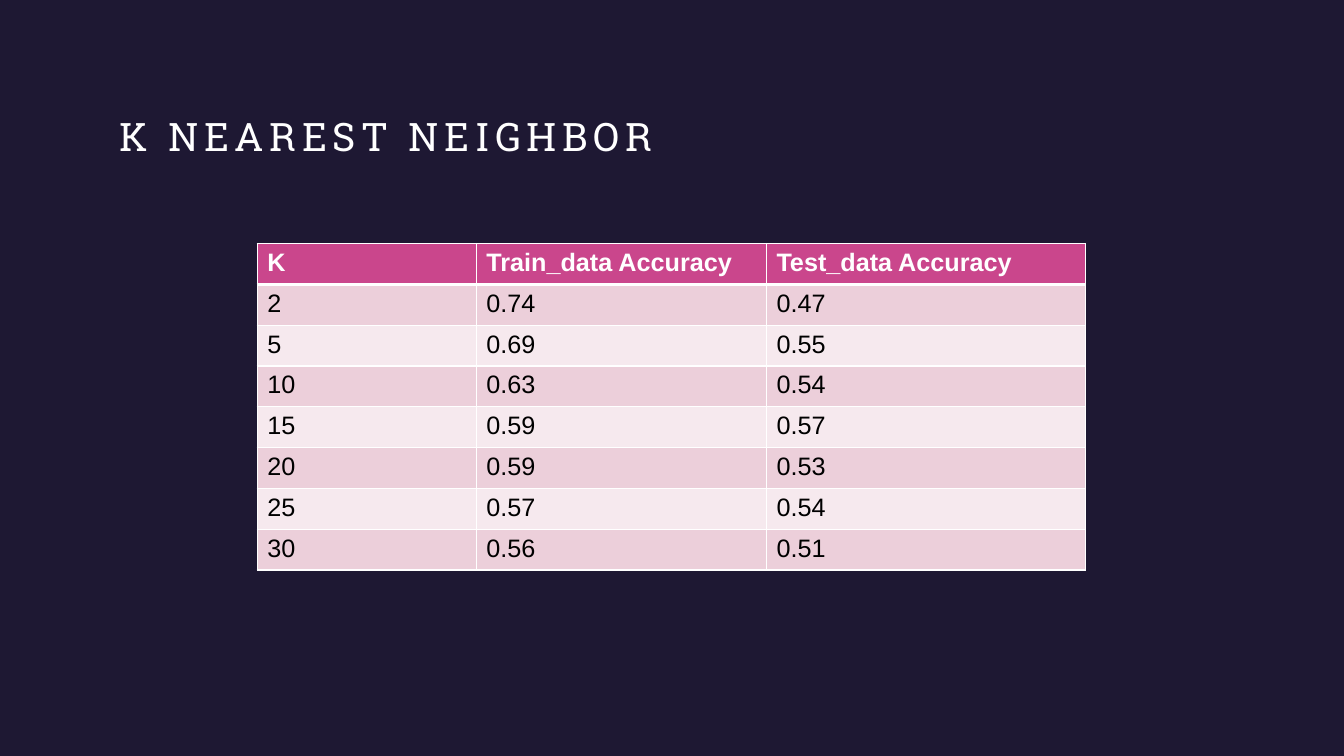
from lxml.etree import SubElement
from pptx import Presentation
from pptx.dml.color import RGBColor
from pptx.enum.text import MSO_ANCHOR
from pptx.oxml.ns import qn
from pptx.util import Pt

TITLE = "K NEAREST NEIGHBOR"
ROWS = [
    ("K", "Train_data Accuracy", "Test_data Accuracy"),
    ("2", "0.74", "0.47"),
    ("5", "0.69", "0.55"),
    ("10", "0.63", "0.54"),
    ("15", "0.59", "0.57"),
    ("20", "0.59", "0.53"),
    ("25", "0.57", "0.54"),
    ("30", "0.56", "0.51"),
]
COLUMN_WIDTHS = (156.5, 207.2, 228.2)
ROW_HEIGHT = 29.16
TABLE_LEFT, TABLE_TOP = 183.8, 174
COLORS = {
    "background": "1E1833",
    "white": "FFFFFF",
    "black": "000000",
    "header": "CA468C",
    "odd": "ECCFDA",
    "even": "F6E9EE",
}


def color(name):
    return RGBColor.from_string(COLORS[name])


def add_text(paragraph, text, font_name, size, color_name, bold=False):
    run = paragraph.add_run()
    run.text = text
    run.font.name = font_name
    run.font.size = Pt(size)
    run.font.bold = bold
    run.font.color.rgb = color(color_name)
    return run


def add_borders(cell, widths):
    properties = cell._tc.get_or_add_tcPr()
    for position, (side, width) in enumerate(widths.items()):
        line = properties.makeelement(qn(f"a:{side}"), {"w": str(Pt(width))})
        fill = SubElement(line, qn("a:solidFill"))
        SubElement(fill, qn("a:srgbClr"), val=COLORS["white"])
        properties.insert(position, line)


def add_title(slide):
    box = slide.shapes.add_textbox(Pt(85), Pt(80), Pt(790), Pt(52))
    frame = box.text_frame
    frame.word_wrap = True
    frame.vertical_anchor = MSO_ANCHOR.TOP
    frame.margin_left = frame.margin_top = frame.margin_right = frame.margin_bottom = 0
    run = add_text(frame.paragraphs[0], TITLE, "Roboto Slab", 28, "white")
    run.font._element.set("spc", "400")


def add_accuracy_table(slide):
    table = slide.shapes.add_table(
        len(ROWS), len(COLUMN_WIDTHS), Pt(TABLE_LEFT), Pt(TABLE_TOP),
        Pt(sum(COLUMN_WIDTHS)), Pt(ROW_HEIGHT * len(ROWS)),
    ).table
    for column, width in zip(table.columns, COLUMN_WIDTHS):
        column.width = Pt(width)
    for row_index, values in enumerate(ROWS):
        table.rows[row_index].height = Pt(ROW_HEIGHT)
        header = row_index == 0
        fill_name = "header" if header else ("even", "odd")[row_index % 2]
        top = 3 if row_index == 1 else 1
        bottom = 3 if header else 1
        for column_index, value in enumerate(values):
            cell = table.cell(row_index, column_index)
            cell.fill.solid()
            cell.fill.fore_color.rgb = color(fill_name)
            add_borders(cell, {"lnL": 1, "lnR": 1, "lnT": top, "lnB": bottom})
            add_text(cell.text_frame.paragraphs[0], value, "Arial", 18,
                     "white" if header else "black", header)


def main():
    presentation = Presentation()
    presentation.slide_width, presentation.slide_height = Pt(960), Pt(540)
    slide = presentation.slides.add_slide(presentation.slide_layouts[6])
    slide.background.fill.solid()
    slide.background.fill.fore_color.rgb = color("background")
    add_title(slide)
    add_accuracy_table(slide)
    presentation.save("out.pptx")


if __name__ == "__main__":
    main()
